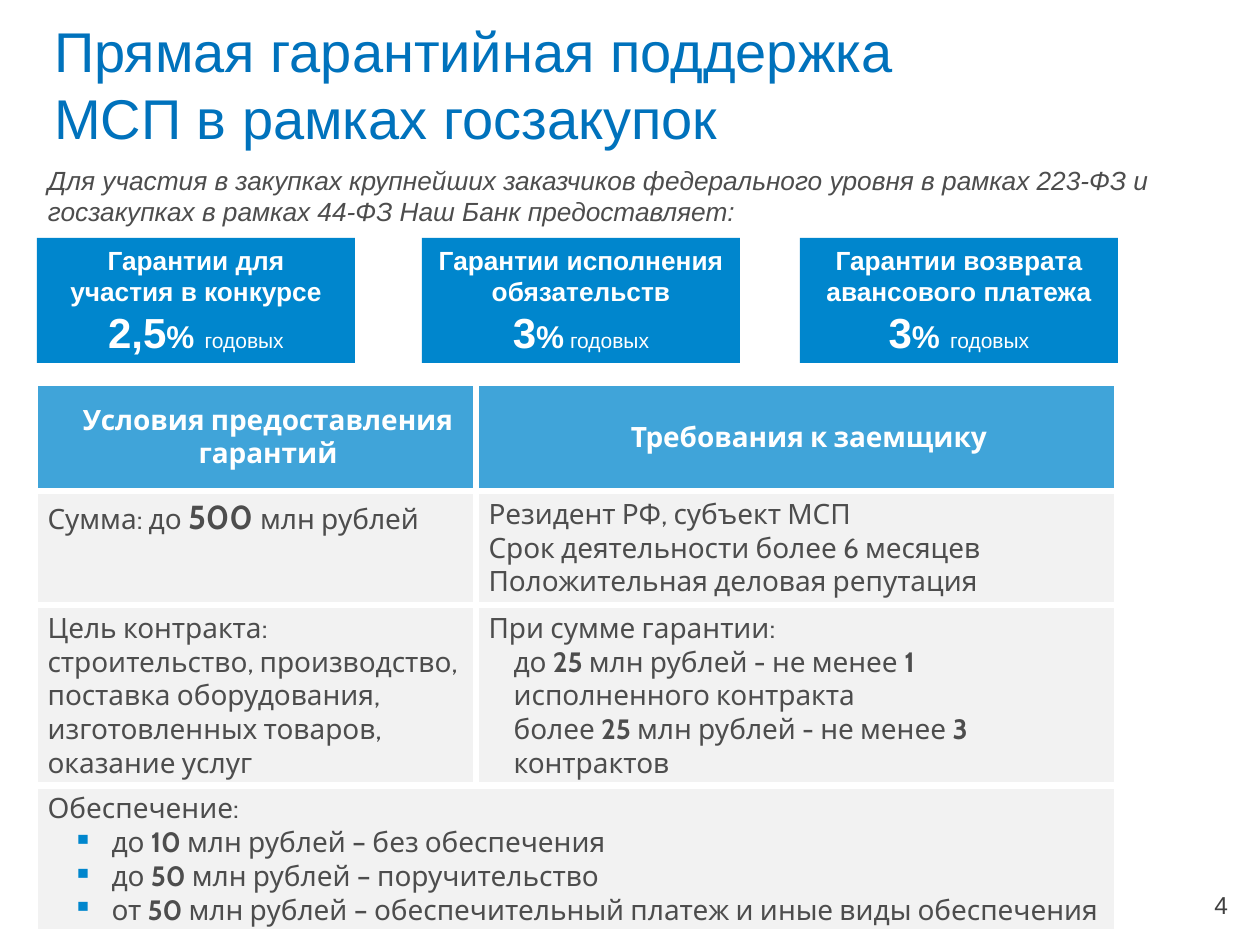
from dataclasses import dataclass

from lxml import etree
from pptx import Presentation
from pptx.dml.color import RGBColor
from pptx.enum.shapes import MSO_SHAPE
from pptx.enum.text import MSO_ANCHOR, PP_ALIGN
from pptx.oxml.ns import qn
from pptx.util import Emu, Pt

LEFT, MID, RIGHT = PP_ALIGN.LEFT, PP_ALIGN.CENTER, PP_ALIGN.RIGHT
TOP, CENTER = MSO_ANCHOR.TOP, MSO_ANCHOR.MIDDLE
RECT = MSO_SHAPE.RECTANGLE


def px(n: int) -> Emu:
    return Emu(round(n * 914400 / 126))


@dataclass(frozen=True)
class Theme:
    title: str = "0072BC"
    blue: str = "0086CD"
    white: str = "FFFFFF"
    pale: str = "F2F2F2"
    ink: str = "4D4D4D"
    dark: str = "404040"
    sans: str = "Arial"
    grid: str = "Cabin"
    head: int = 32
    big: int = 24
    gap: int = 21
    sign: int = 18
    sum: int = 19
    cell: int = 16
    body: int = 15
    page: int = 14
    note: int = 12


T = Theme()


@dataclass(frozen=True)
class Style:
    font: str
    size: int
    color: str
    bold: bool = False
    italic: bool = False


@dataclass(frozen=True)
class Run:
    text: str
    size: int = 0  # 0 keeps the size of the style
    bold: bool | None = None  # None keeps the weight of the style


@dataclass(frozen=True)
class Para:
    runs: tuple[Run, ...]
    align: PP_ALIGN = LEFT
    left: int = 0
    hang: int = 0
    mark: str = ""


@dataclass(frozen=True)
class Card:
    left: int
    lines: tuple[str, ...]
    rate: str
    gap: int


@dataclass(frozen=True)
class Cell:
    row: int
    col: int
    paras: tuple[Para, ...]
    anchor: MSO_ANCHOR = TOP


def plain(text: str, align: PP_ALIGN = LEFT, left: int = 0) -> Para:
    return Para((Run(text),), align, left)


def mixed(*parts: str, left: int = 25, hang: int = 0, mark: str = "") -> Para:
    """Every second part is bold."""
    runs = tuple(Run(part, bold=i % 2 == 1) for i, part in enumerate(parts))
    return Para(runs, LEFT, left, hang, mark)


def bullet(*parts: str) -> Para:
    return mixed(*parts, left=64, hang=39, mark="▪")


def write(frame, paras: tuple[Para, ...], style: Style) -> None:
    for i, para in enumerate(paras):
        line = frame.add_paragraph() if i else frame.paragraphs[0]
        props = line._p.get_or_add_pPr()
        if para.left:
            props.set("marL", str(px(para.left)))
            props.set("indent", str(-px(para.hang)))
        if para.mark:
            tint = etree.SubElement(props, qn("a:buClr"))
            etree.SubElement(tint, qn("a:srgbClr"), val=T.blue)
            etree.SubElement(props, qn("a:buChar"), char=para.mark)
        line.alignment = para.align
        line.text = para.runs[0].text
        for run in para.runs[1:]:
            line.add_run().text = run.text
        # A line break splits no run here, except in the title
        for j, part in enumerate(line.runs):
            run = para.runs[min(j, len(para.runs) - 1)]
            font = part.font
            font.name, font.size = style.font, Pt(run.size or style.size)
            font.bold = style.bold if run.bold is None else run.bold
            font.italic = style.italic
            font.color.rgb = RGBColor.from_string(style.color)


def pad(frame, side: int, end: int) -> None:
    frame.margin_left = frame.margin_right = px(side)
    frame.margin_top = frame.margin_bottom = px(end)


def label(slide, box: tuple[int, ...], para: Para, style: Style,
          anchor: MSO_ANCHOR = TOP, side: int = 13, end: int = 6) -> None:
    frame = slide.shapes.add_textbox(*map(px, box)).text_frame
    frame.word_wrap = True
    frame.vertical_anchor = anchor
    pad(frame, side, end)
    write(frame, (para,), style)


def draw_card(slide, card: Card) -> None:
    shape = slide.shapes.add_shape(RECT, *map(px, (card.left, 238, 318, 125)))
    shape.shadow.inherit = False
    shape.fill.solid()
    shape.fill.fore_color.rgb = RGBColor.from_string(T.blue)
    shape.line.fill.background()
    frame = shape.text_frame
    frame.word_wrap = True
    frame.vertical_anchor = CENTER
    pad(frame, 10, 5)
    rate = Para((Run(card.rate, T.big), Run("%", T.sign), Run(" ", card.gap),
                 Run("годовых", T.note, False)), MID)
    paras = tuple(plain(line, MID) for line in card.lines) + (rate,)
    write(frame, paras, Style(T.sans, T.body, T.white, bold=True))


def paint(cell, color: str, alpha: int = 100) -> None:
    cell.fill.solid()
    cell.fill.fore_color.rgb = RGBColor.from_string(color)
    props = cell._tc.get_or_add_tcPr()
    if alpha < 100:
        tint = props.find(".//" + qn("a:srgbClr"))
        etree.SubElement(tint, qn("a:alpha"), val=str(alpha * 1000))
    # Borders stand before the fill
    for i, side in enumerate(("lnL", "lnR", "lnT", "lnB")):
        edge = etree.Element(qn("a:" + side), w=str(Pt(4.5)))
        fill = etree.SubElement(edge, qn("a:solidFill"))
        etree.SubElement(fill, qn("a:srgbClr"), val=T.white)
        props.insert(i, edge)


def draw_table(slide, cells: tuple[Cell, ...]) -> None:
    cols, rows = (441, 641), (108, 114, 180, 147)
    box = map(px, (35, 383, sum(cols), sum(rows)))
    table = slide.shapes.add_table(len(rows), len(cols), *box).table
    table.first_row = table.horz_banding = False
    for col, width in zip(table.columns, cols):
        col.width = px(width)
    for i, (row, height) in enumerate(zip(table.rows, rows)):
        row.height = px(height)
        for cell in row.cells:
            paint(cell, *((T.pale,) if i else (T.blue, 75)))
    table.cell(3, 0).merge(table.cell(3, 1))
    head = Style(T.grid, T.cell, T.white, bold=True)
    body = Style(T.grid, T.cell, T.ink)
    for item in cells:
        cell = table.cell(item.row, item.col)
        cell.vertical_anchor = item.anchor
        write(cell.text_frame, item.paras, body if item.row else head)


CARDS = (
    Card(37, ("Гарантии для", "участия в конкурсе"), "2,5", T.gap),
    Card(422, ("Гарантии исполнения обязательств",), "3", T.note),
    Card(800, ("Гарантии возврата", "авансового платежа"), "3", T.gap),
)
CELLS = (
    Cell(0, 0, (plain("Условия предоставления гарантий", MID, 25),), CENTER),
    Cell(0, 1, (plain("Требования к заемщику", MID, 25),), CENTER),
    Cell(1, 0, (Para((Run("Сумма: до "), Run("500 ", T.sum, True),
                      Run("млн рублей"))),)),
    Cell(1, 1, (plain("Резидент РФ, субъект МСП"),
                plain("Срок деятельности более 6 месяцев"),
                plain("Положительная деловая репутация"))),
    Cell(2, 0, (plain("Цель контракта: строительство, производство, поставка "
                      "оборудования, изготовленных товаров, оказание услуг"),)),
    Cell(2, 1, (plain("При сумме гарантии:"),
                mixed("до ", "25", " млн рублей - не менее ", "1",
                      " исполненного контракта"),
                mixed("более ", "25", " млн рублей - не менее ", "3",
                      " контрактов"))),
    Cell(3, 0, (plain("Обеспечение:"),
                bullet("до ", "10", " млн рублей – без обеспечения"),
                bullet("до ", "50", " млн рублей – поручительство"),
                bullet("от ", "50", " млн рублей – обеспечительный платеж "
                       "и иные виды обеспечения")), CENTER),
)


def main() -> None:
    deck = Presentation()
    deck.slide_width, deck.slide_height = px(1260), px(945)
    slide = deck.slides.add_slide(deck.slide_layouts[6])
    # Title, page number and lead
    label(slide, (54, 16, 1063, 120),
          plain("Прямая гарантийная поддержка\vМСП в рамках госзакупок"),
          Style(T.sans, T.head, T.title), side=0, end=0)
    label(slide, (948, 880, 293, 50), plain("4", RIGHT),
          Style(T.sans, T.page, T.dark), CENTER)
    label(slide, (35, 158, 1160, 77),
          plain("Для участия в закупках крупнейших заказчиков федерального "
                "уровня в рамках 223-ФЗ и госзакупках в рамках 44-ФЗ "
                "Наш Банк предоставляет:"),
          Style(T.sans, T.body, T.ink, italic=True))
    # Guarantee rates
    for card in CARDS:
        draw_card(slide, card)
    # Terms
    draw_table(slide, CELLS)
    deck.save("out.pptx")


if __name__ == "__main__":
    main()
